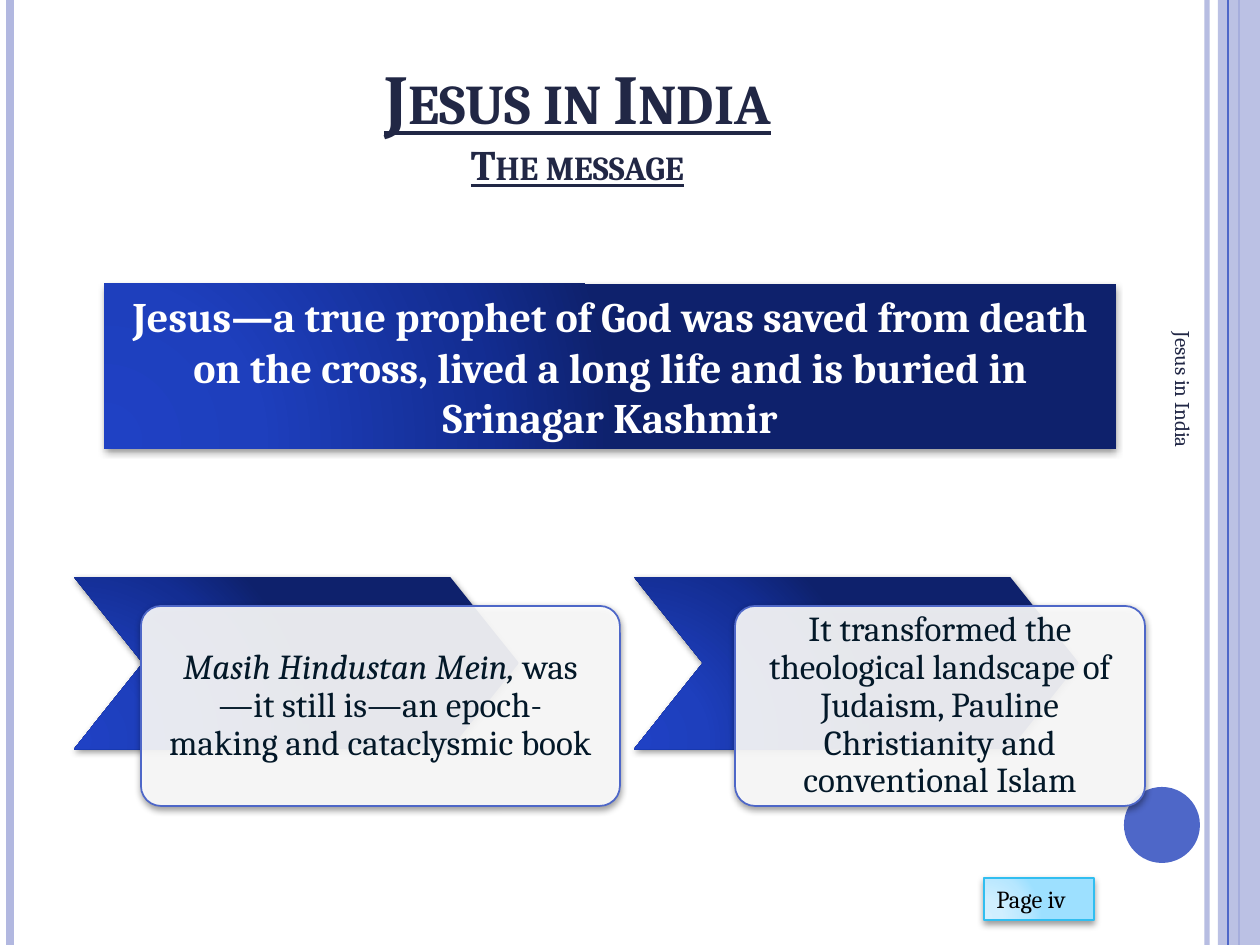
from lxml.etree import SubElement
from pptx import Presentation
from pptx.dml.color import RGBColor
from pptx.enum.shapes import MSO_CONNECTOR, MSO_SHAPE
from pptx.enum.text import MSO_ANCHOR, PP_ALIGN
from pptx.oxml.ns import qn
from pptx.util import Emu, Pt

PX = 914400 / 126
WIDTH, HEIGHT = 1260, 945
FONT = "Cambria"
COLORS = {
    "lilac": "B2B8E0", "blue": "4E67C8", "navy": "212745", "ink": "031828",
    "white": "FFFFFF", "black": "000000", "cyan": "31BEF0",
}
STOPS = (0, 30, 75, 100)
GRADIENTS = {
    "royal": ("1F41C4", "1E3FBD", "132D92", "0E216C"),
    "sky": ("D4F0FF", "D0EFFF", "B7E7FF", "9DE0FF"),
}


def px(n):
    return Emu(round(n * PX))


def add(parent, tag, **attrs):
    return SubElement(parent, qn(tag), {k: str(v) for k, v in attrs.items()})


class Deck:
    """Holds the style and the current slide."""

    def __init__(self):
        self.prs = Presentation()
        self.prs.slide_width, self.prs.slide_height = px(WIDTH), px(HEIGHT)
        self.slide = self.prs.slides.add_slide(self.prs.slide_layouts[6])

    def solid(self, fill, color, alpha=100):
        fill.solid()
        fill.fore_color.rgb = RGBColor.from_string(COLORS[color])
        if alpha < 100:
            clr = fill._xPr.find(qn("a:solidFill"))[0]
            add(clr, "a:alpha", val=alpha * 1000)

    def gradient(self, sp, name):
        sp.fill.gradient()
        grad = sp._element.spPr.find(qn("a:gradFill"))
        for child in list(grad):
            grad.remove(child)
        stops = add(grad, "a:gsLst")
        for pos, color in zip(STOPS, GRADIENTS[name]):
            add(add(stops, "a:gs", pos=pos * 1000), "a:srgbClr", val=color)
        add(add(grad, "a:path", path="circle"), "a:fillToRect",
            l=5000, t=100000, r=120000, b=10000)

    def shadow(self, sp, dist=1.6, alpha=42):
        effects = sp._element.spPr.find(qn("a:effectLst"))
        shade = add(effects, "a:outerShdw", blurRad=Pt(4), dist=Pt(dist),
                    dir=5400000, rotWithShape=0)
        add(add(shade, "a:srgbClr", val=COLORS["black"]), "a:alpha", val=alpha * 1000)

    def rule(self, x, color, width, alpha=100):
        line = self.slide.shapes.add_connector(
            MSO_CONNECTOR.STRAIGHT, px(x), 0, px(x), px(HEIGHT))
        line.line.width = Pt(width)
        self.solid(line.line.fill, color, alpha)
        add(line._element.spPr, "a:effectLst")

    def shape(self, kind, box, fill, alpha=100, line=None, adj=None):
        sp = self.slide.shapes.add_shape(kind, *map(px, box))
        sp.shadow.inherit = False
        if adj is not None:
            sp.adjustments[0] = adj
        if fill in GRADIENTS:
            self.gradient(sp, fill)
        else:
            self.solid(sp.fill, fill, alpha)
        if line:
            self.solid(sp.line.fill, line)
            sp.line.width = Pt(1)
        else:
            sp.line.fill.background()
        return sp

    def textbox(self, box):
        return self.slide.shapes.add_textbox(*map(px, box))

    def text(self, sp, runs, size, color, align=PP_ALIGN.CENTER,
             anchor=MSO_ANCHOR.MIDDLE, bold=None):
        """Writes one paragraph and returns it; runs are (text, italic) pairs."""
        tf = sp.text_frame
        tf.word_wrap = True
        tf.vertical_anchor = anchor
        p = tf.paragraphs[0]
        p.alignment = align
        p.font.name, p.font.size, p.font.bold = FONT, Pt(size), bold
        p.font.color.rgb = RGBColor.from_string(COLORS[color])
        for words, italic in runs:
            r = p.add_run()
            r.text = words
            r.font.italic = italic
        return p

    def title(self, box, lines):
        sp = self.textbox(box)
        p = self.text(sp, [], lines[0][1], "navy", anchor=MSO_ANCHOR.BOTTOM, bold=True)
        for i, (words, size) in enumerate(lines):
            if i:
                p.add_line_break()
            r = p.add_run()
            r.text = words
            r.font.size, r.font.underline = Pt(size), True
            r.font._element.set("cap", "small")

    def card(self, arrow_x, x, width, runs):
        """A chevron with a rounded text card over it."""
        arrow = self.shape(MSO_SHAPE.CHEVRON, (arrow_x, 577, 445, 172), "royal", adj=0.4)
        self.shadow(arrow)
        sp = self.shape(MSO_SHAPE.ROUNDED_RECTANGLE, (x, 606, width, 200),
                        "white", 90, "blue", 0.1)
        self.shadow(sp)
        tf = sp.text_frame
        tf.margin_left = tf.margin_right = tf.margin_top = tf.margin_bottom = px(20)
        self.text(sp, runs, 20, "ink").line_spacing = 0.9


def main():
    deck = Deck()

    # Side stripes and dot
    deck.rule(1207, "lilac", 3, 93)
    deck.rule(10, "lilac", 4.5)
    deck.rule(1239, "blue", 1.5)
    deck.shape(MSO_SHAPE.RECTANGLE, (1218, 0, 42, HEIGHT), "lilac", 87)
    deck.rule(1228, "blue", 0.75)
    deck.shape(MSO_SHAPE.OVAL, (1124, 787, 76, 76), "blue")

    # Title
    deck.title((63, 38, 1029, 157), [("Jesus in India", 40), ("The message", 24)])

    # Cards
    deck.card(74, 141, 479, [
        ("Masih Hindustan Mein, ", True),
        ("was—it still is—an epoch-making and cataclysmic book", False)])
    deck.card(634, 735, 410, [
        ("It transformed the theological landscape of Judaism, "
         "Pauline Christianity and conventional Islam", None)])

    # Banner
    banner = deck.shape(MSO_SHAPE.RECTANGLE, (104, 284, 1012, 165), "royal")
    deck.shadow(banner)
    deck.text(banner, [("Jesus—a true prophet of God was saved from death on the cross, "
                        "lived a long life and is buried in Srinagar Kashmir", None)],
              24, "white", bold=True)

    # Page label
    page = deck.shape(MSO_SHAPE.RECTANGLE, (984, 878, 110, 42), "sky", line="cyan")
    deck.shadow(page, 2, 40)
    deck.text(page, [("Page iv", None)], 14, "black", PP_ALIGN.LEFT)

    # Running footer
    footer = deck.textbox((963, 515, 441, 50))
    footer.rotation = 90
    deck.text(footer, [("Jesus in India", None)], 12, "navy", PP_ALIGN.LEFT)

    deck.prs.save("out.pptx")


if __name__ == "__main__":
    main()
